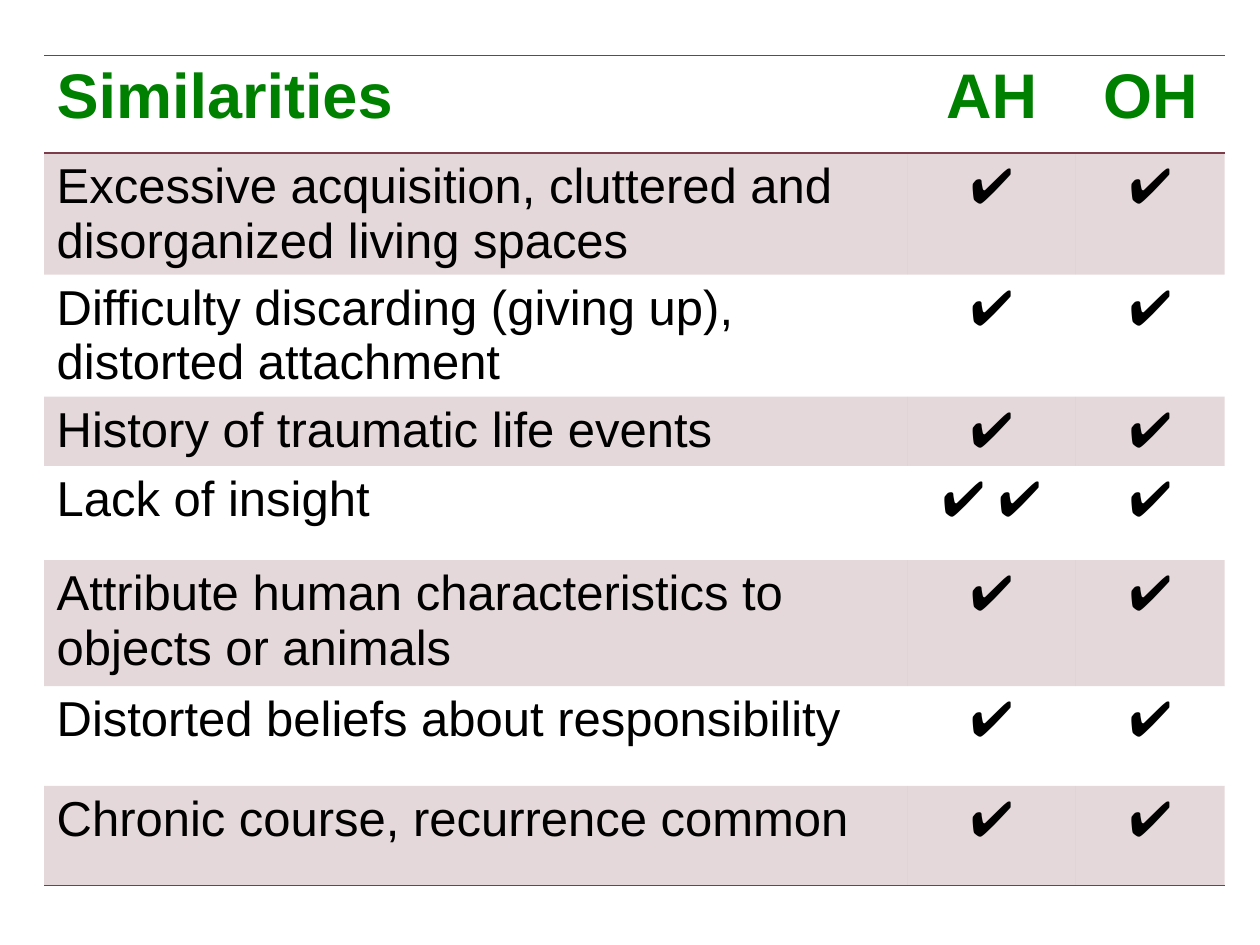
"""Build a slide with a table of similarities between AH and OH."""
from dataclasses import dataclass

import pptx
import pptx.dml.color
import pptx.enum.text
import pptx.oxml
import pptx.oxml.ns
import pptx.util
from pptx.util import Cm, Pt

NO_STYLE = "{2D5ABB26-0587-4C30-8999-92F81FD0307C}"
CHECK = "✔"


@dataclass(frozen=True)
class Theme:
    font: str = "Arial"
    heading: str = "008000"
    body: str = "000000"
    accent: str = "7D3C4A"
    band_alpha: int = 20
    heading_size: int = 36
    body_size: int = 28
    rule_width: int = 1


@dataclass(frozen=True)
class Row:
    height: float
    label: str
    ah: str = CHECK
    oh: str = CHECK


THEME = Theme()
COLUMN_WIDTHS = (17.4, 3.4, 3)
ROWS = (
    Row(1.96, "Similarities", "AH", "OH"),
    Row(2.16, "Excessive acquisition, cluttered and disorganized living spaces"),
    Row(2.01, "Difficulty discarding (giving up), distorted attachment"),
    Row(1.4, "History of traumatic life events"),
    Row(1.9, "Lack of insight", f"{CHECK} {CHECK}"),
    Row(2.54, "Attribute human characteristics to objects or animals"),
    Row(2.01, "Distorted beliefs about responsibility"),
    Row(2.01, "Chronic course, recurrence common"),
)


def write_text(cell, text: str, heading: bool, centered: bool) -> None:
    cell.text = text
    p = cell.text_frame.paragraphs[0]
    if centered:
        p.alignment = pptx.enum.text.PP_ALIGN.CENTER
    p.font.name = THEME.font
    p.font.bold = heading
    p.font.size = Pt(THEME.heading_size if heading else THEME.body_size)
    color = THEME.heading if heading else THEME.body
    p.font.color.rgb = pptx.dml.color.RGBColor.from_string(color)


def fill_cell(cell, banded: bool) -> None:
    if not banded:
        cell.fill.background()
        return
    cell.fill.solid()
    cell.fill.fore_color.rgb = pptx.dml.color.RGBColor.from_string(THEME.accent)
    color = cell._tc.tcPr.find(".//" + pptx.oxml.ns.qn("a:srgbClr"))
    alpha = pptx.oxml.parse_xml(
        f'<a:alpha {pptx.oxml.ns.nsdecls("a")} val="{THEME.band_alpha * 1000}"/>'
    )
    color.append(alpha)


def add_rules(cell, sides: str) -> None:
    for position, side in enumerate(sides):
        line = pptx.oxml.parse_xml(
            f'<a:ln{side} {pptx.oxml.ns.nsdecls("a")} w="{Pt(THEME.rule_width)}">'
            f'<a:solidFill><a:srgbClr val="{THEME.accent}"/></a:solidFill>'
            f"</a:ln{side}>"
        )
        cell._tc.get_or_add_tcPr().insert(position, line)


def add_similarities(s) -> None:
    width = Cm(sum(COLUMN_WIDTHS))
    height = Cm(sum(row.height for row in ROWS))
    frame = s.shapes.add_table(
        len(ROWS), len(COLUMN_WIDTHS), Cm(0.89), Cm(1.12), width, height
    )
    table = frame.table
    table.horz_banding = False
    style = table._tbl.tblPr.find(pptx.oxml.ns.qn("a:tableStyleId"))
    style.text = NO_STYLE
    for column, column_width in zip(table.columns, COLUMN_WIDTHS):
        column.width = Cm(column_width)
    rules = {0: "TB", len(ROWS) - 1: "B"}
    for i, row in enumerate(ROWS):
        table.rows[i].height = Cm(row.height)
        for j, text in enumerate((row.label, row.ah, row.oh)):
            cell = table.cell(i, j)
            write_text(cell, text, heading=i == 0, centered=j > 0)
            fill_cell(cell, banded=i % 2 == 1)
            add_rules(cell, rules.get(i, ""))


def main() -> None:
    prs = pptx.Presentation()
    prs.slide_width, prs.slide_height = Cm(25.4), Cm(19.05)
    s = prs.slides.add_slide(prs.slide_layouts[6])
    add_similarities(s)
    prs.save("out.pptx")


if __name__ == "__main__":
    main()
